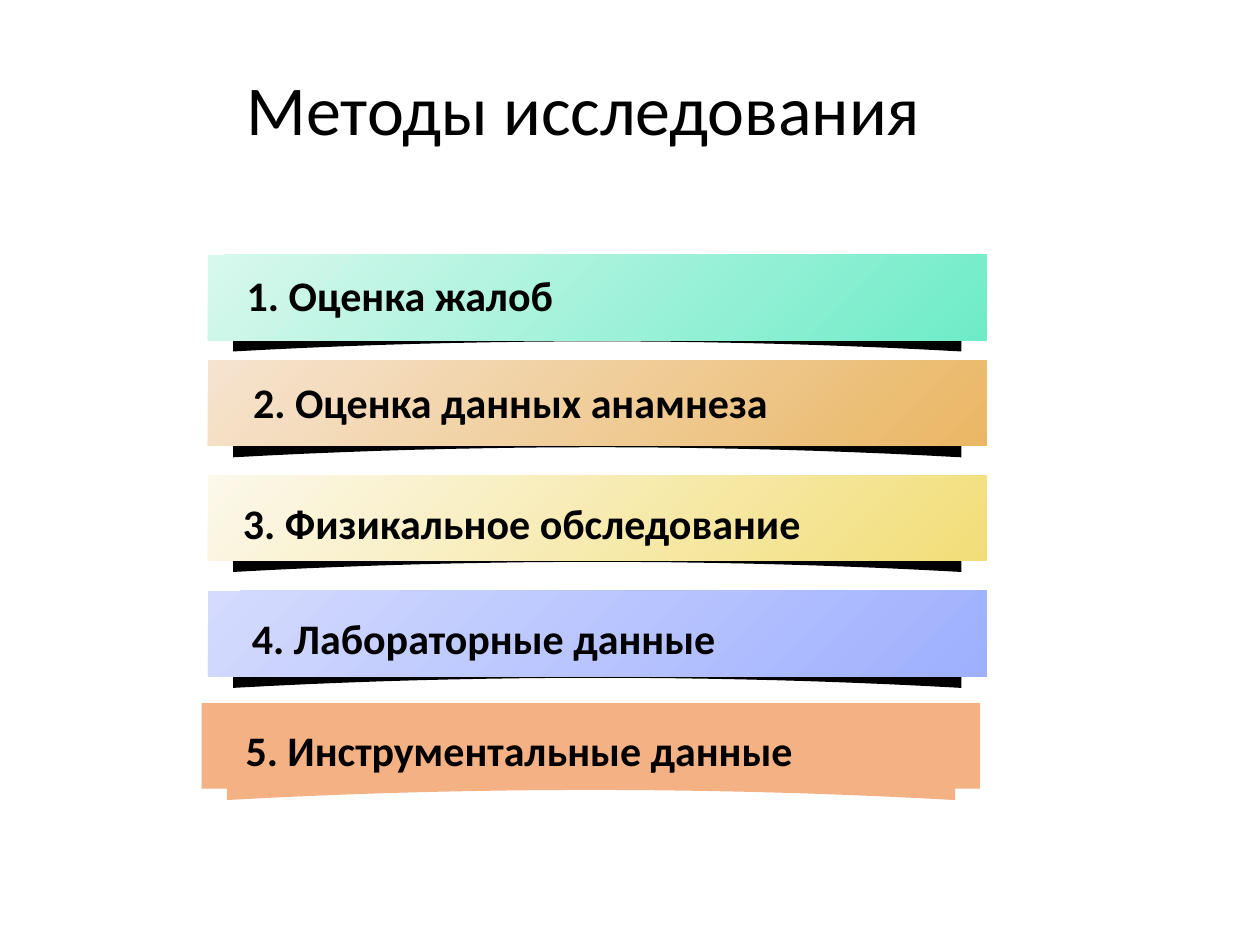
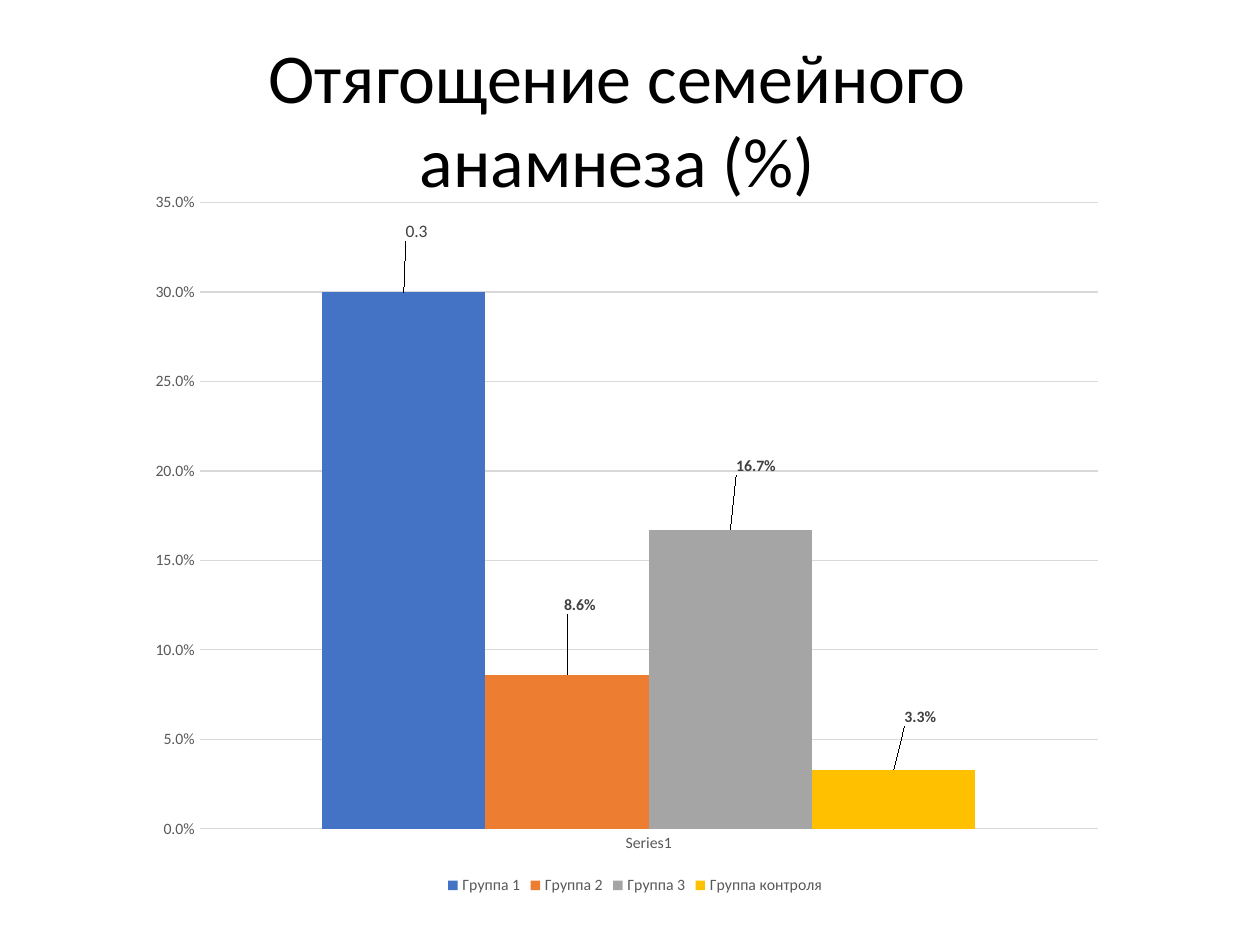
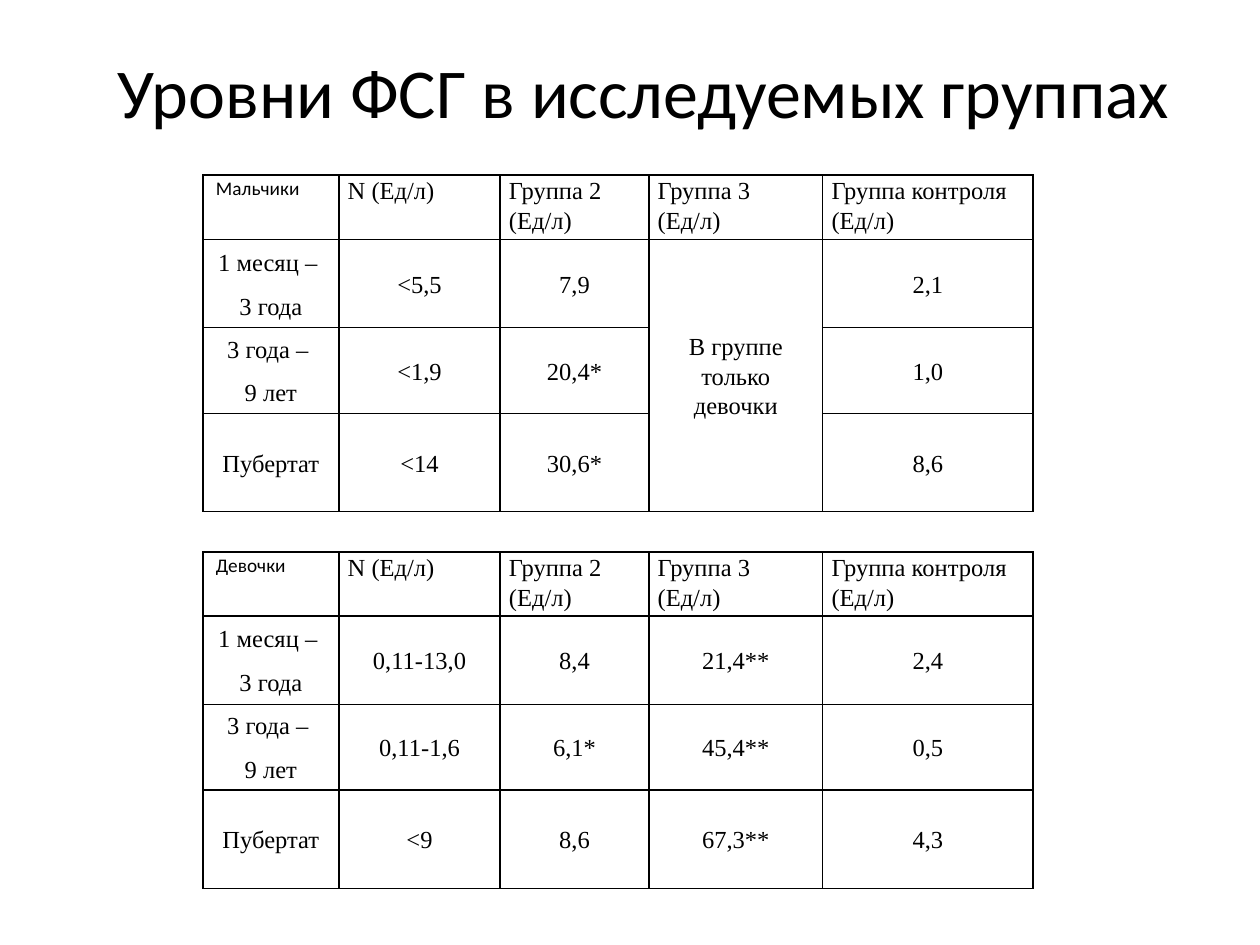
from dataclasses import dataclass
from typing import Optional

from lxml.etree import Element, SubElement
from pptx import Presentation
from pptx.chart.data import CategoryChartData
from pptx.dml.color import RGBColor
from pptx.enum.chart import XL_CHART_TYPE as ChartType
from pptx.enum.chart import XL_LABEL_POSITION as LabelPosition
from pptx.enum.chart import XL_LEGEND_POSITION as LegendPosition
from pptx.enum.chart import XL_TICK_MARK as TickMark
from pptx.enum.shapes import MSO_SHAPE as Preset
from pptx.enum.text import MSO_ANCHOR as Anchor
from pptx.enum.text import MSO_AUTO_SIZE as AutoSize
from pptx.enum.text import PP_ALIGN as Align
from pptx.oxml.ns import qn
from pptx.util import Inches, Pt

COLORS = {
    "text": "000000",
    "label": "404040",
    "axis": "595959",
    "grid": "D9D9D9",
    "mint_light": "D9F8ED",
    "mint": "6EECC8",
    "sand_light": "F6E4D0",
    "sand": "EAB764",
    "lemon_light": "FCF8EB",
    "lemon": "F2DE78",
    "violet_light": "D4DBFE",
    "violet": "9EB0FE",
    "peach": "F4B183",
    "group_1": "4472C4",
    "group_2": "ED7D31",
    "group_3": "A5A5A5",
    "control": "FFC000",
}
SANS = "Calibri"
SERIF = "Times New Roman"
TITLE_ONLY = 5
CELL = Inches(0.1)
BAR_COLS, BAR_ROWS = 61.8, 6.8
CURL_STEPS = 20


@dataclass(frozen=True)
class Box:
    col: float
    row: float
    cols: float
    rows: float

    def lengths(self) -> tuple:
        return tuple(grid(n) for n in (self.col, self.row, self.cols, self.rows))


@dataclass(frozen=True)
class Method:
    text: str
    col: float
    row: float
    text_col: float
    text_row: float
    text_cols: float
    color: str
    light: Optional[str] = None
    curl: str = "text"


@dataclass(frozen=True)
class Group:
    name: str
    share: float
    color: str
    label_dx: float
    label_dy: float
    fixed_label: Optional[str] = None


@dataclass(frozen=True)
class LevelTable:
    who: str
    row: float
    levels: tuple
    merged_note: bool = False


METHODS = (
    Method("1. Оценка жалоб", 16.5, 20.2, 18.6, 20.9, 59.7, "mint", "mint_light"),
    Method("2. Оценка данных анамнеза", 16.5, 28.6, 19.1, 29.4, 56.2, "sand", "sand_light"),
    Method("3. Физикальное обследование", 16.5, 37.7, 18.3, 39, 63.9, "lemon", "lemon_light"),
    Method("4. Лабораторные данные", 16.5, 46.9, 19, 48.1, 46.7, "violet", "violet_light"),
    Method("5. Инструментальные данные", 16, 55.8, 18.5, 57, 58.1, "peach", curl="peach"),
)
GROUPS = (
    Group("Группа 1", 0.3, "group_1", 1.3, -6.5, "0.3"),
    Group("Группа 2", 0.086, "group_2", 1.3, -7.8, None),
    Group("Группа 3", 0.167, "group_3", 2.6, -7, None),
    Group("Группа контроля", 0.033, "control", 2.7, -5.4, None),
)
PLOT_PERCENT = {"x": 5.7, "y": 1.4, "w": 91.4, "h": 88.6}
AGES = (("1 месяц – ", "3 года"), ("3 года – ", "9 лет"), ("Пубертат",))
HEADINGS = ("N (Ед/л)", "Группа 2 (Ед/л)", "Группа 3 (Ед/л)", "Группа контроля\n(Ед/л)")
LEVEL_COLS = (10.8, 12.8, 11.8, 13.8, 16.7)
LEVEL_ROWS = (5.1, 7, 6.8, 7.8)
LEVEL_TABLES = (
    LevelTable(
        " Мальчики",
        13.9,
        (
            ("<5,5", "7,9", "В группе только девочки", "2,1"),
            ("<1,9", "20,4*", "", "1,0"),
            ("<14", "30,6*", "", "8,6"),
        ),
        merged_note=True,
    ),
    LevelTable(
        " Девочки",
        43.8,
        (
            ("0,11-13,0", "8,4", "21,4**", "2,4"),
            ("0,11-1,6", "6,1*", "45,4**", "0,5"),
            ("<9", "8,6", "67,3**", "4,3"),
        ),
    ),
)


def grid(count: float) -> int:
    return round(count * CELL)


def rgb(name: str) -> RGBColor:
    return RGBColor.from_string(COLORS[name])


def style(font, size: float, color: str = "text", face: str = SANS, bold: bool = False) -> None:
    font.size, font.name, font.bold = Pt(size), face, bold
    font.color.rgb = rgb(color)


def place(shape, box: Box) -> None:
    shape.left, shape.top, shape.width, shape.height = box.lengths()


def titled_slide(deck, title: str, box: Box):
    slide = deck.slides.add_slide(deck.slide_layouts[TITLE_ONLY])
    heading = slide.shapes.title
    place(heading, box)
    frame = heading.text_frame
    frame.text = title
    frame.word_wrap, frame.auto_size = True, AutoSize.NONE
    frame.vertical_anchor = Anchor.MIDDLE
    frame.paragraphs[0].alignment = Align.CENTER
    style(frame.paragraphs[0].runs[0].font, 40)
    return slide


def draw_curl(shapes, method: Method) -> None:
    left, top = method.col + 2, method.row + 4.4
    middle, half = left + 28.9, 28.9
    shares = [1 - 2 * step / CURL_STEPS for step in range(CURL_STEPS + 1)]
    lower = [(grid(middle + half * u), grid(top + 2.5 + 0.8 * u * u)) for u in shares]
    upper = [
        (grid(left), grid(top + 0.85)),
        (grid(middle), grid(top)),
        (grid(middle + half), grid(top + 0.85)),
    ]
    builder = shapes.build_freeform(*lower[0])
    builder.add_line_segments(lower[1:] + upper, close=True)
    curl = builder.convert_to_shape()
    curl.shadow.inherit = False
    curl.fill.solid()
    curl.fill.fore_color.rgb = rgb(method.curl)
    curl.line.fill.background()


def draw_method(slide, method: Method) -> None:
    banner = slide.shapes.add_group_shape()
    draw_curl(banner.shapes, method)
    strip = Box(method.col, method.row, BAR_COLS, BAR_ROWS)
    bar = banner.shapes.add_shape(Preset.RECTANGLE, *strip.lengths())
    bar.shadow.inherit = False
    bar.line.fill.background()
    if method.light:
        bar.fill.gradient()
        bar.fill.gradient_angle = 315
        for stop, color in zip(bar.fill.gradient_stops, (method.light, method.color)):
            stop.color.rgb = rgb(color)
    else:
        bar.fill.solid()
        bar.fill.fore_color.rgb = rgb(method.color)
    caption_box = Box(method.text_col, method.text_row, method.text_cols, 5)
    caption = slide.shapes.add_textbox(*caption_box.lengths()).text_frame
    caption.word_wrap = True
    caption.text = method.text
    style(caption.paragraphs[0].runs[0].font, 24, bold=True)


def manual_layout(percents: dict, inner: bool = False):
    layout = Element(qn("c:layout"))
    manual = SubElement(layout, qn("c:manualLayout"))
    if inner:
        SubElement(manual, qn("c:layoutTarget")).set("val", "inner")
        for mode in ("xMode", "yMode"):
            SubElement(manual, qn(f"c:{mode}")).set("val", "edge")
    for side, percent in percents.items():
        SubElement(manual, qn(f"c:{side}")).set("val", f"{percent / 100:.3f}")
    return layout


def format_group(series, group: Group) -> None:
    series.format.fill.solid()
    series.format.fill.fore_color.rgb = rgb(group.color)
    series.invert_if_negative = False
    labels = series.data_labels
    labels.show_value = True
    size = 10 if group.fixed_label else 9
    style(labels.font, size, "label", bold=True)
    label = series.points[0].data_label
    if group.fixed_label:
        label.text_frame.text = group.fixed_label
        style(label.text_frame.paragraphs[0].runs[0].font, size, "label")
    else:
        style(label.font, size, "label", bold=True)
    label.position = LabelPosition.OUTSIDE_END
    offset = manual_layout({"x": group.label_dx, "y": group.label_dy})
    labels._element.find(qn("c:dLbl")).insert(1, offset)


def draw_shares(slide, box: Box) -> None:
    shares = CategoryChartData(number_format="0.0%")
    shares.categories = ["Series1"]
    for group in GROUPS:
        shares.add_series(group.name, [group.share])
    chart = slide.shapes.add_chart(ChartType.COLUMN_CLUSTERED, *box.lengths(), shares).chart
    style(chart.font, 10)
    chart.has_title = False
    chart.has_legend = True
    chart.legend.position = LegendPosition.BOTTOM
    chart.legend.include_in_layout = False
    style(chart.legend.font, 9, "axis")
    for axis in (chart.category_axis, chart.value_axis):
        axis.major_tick_mark = axis.minor_tick_mark = TickMark.NONE
        axis.format.line.fill.background()
        style(axis.tick_labels.font, 9, "axis")
    scale = chart.value_axis
    scale.minimum_scale, scale.maximum_scale, scale.major_unit = 0, 0.35, 0.05
    scale.tick_labels.number_format = "0.0%"
    scale.tick_labels.number_format_is_linked = False
    scale.major_gridlines.format.line.color.rgb = rgb("grid")
    scale.major_gridlines.format.line.width = Pt(0.75)
    plot = chart.plots[0]
    plot.gap_width, plot.overlap, plot.vary_by_categories = 150, 0, False
    for series, group in zip(plot.series, GROUPS):
        format_group(series, group)
    area = chart._chartSpace.find(f".//{qn('c:plotArea')}")
    for automatic in area.findall(qn("c:layout")):
        area.remove(automatic)
    area.insert(0, manual_layout(PLOT_PERCENT, inner=True))


def outline(cell) -> None:
    properties = cell._tc.get_or_add_tcPr()
    for order, side in enumerate(("lnL", "lnR", "lnT", "lnB")):
        line = Element(qn(f"a:{side}"), w=str(Pt(1)))
        paint = SubElement(line, qn("a:solidFill"))
        SubElement(paint, qn("a:srgbClr")).set("val", COLORS["text"])
        properties.insert(order, line)


def fill_cell(cell, lines: tuple, heading: bool, size: float, face: str) -> None:
    cell.margin_left = cell.margin_right = Inches(0.07)
    cell.margin_top = cell.margin_bottom = 0
    cell.vertical_anchor = Anchor.TOP if heading else Anchor.MIDDLE
    cell.fill.background()
    outline(cell)
    frame = cell.text_frame
    for index, line in enumerate(lines):
        paragraph = frame.add_paragraph() if index else frame.paragraphs[0]
        paragraph.text = line.replace("\n", "\v")
        paragraph.alignment = Align.LEFT if heading else Align.CENTER
        paragraph.line_spacing, paragraph.space_after = 1.1, Pt(8)
        style(paragraph.font, size, face=face)
        for run in paragraph.runs:
            style(run.font, size, face=face)


def draw_levels(slide, levels: LevelTable) -> None:
    box = Box(16.1, levels.row, sum(LEVEL_COLS), sum(LEVEL_ROWS))
    table = slide.shapes.add_table(len(LEVEL_ROWS), len(LEVEL_COLS), *box.lengths()).table
    table.first_row = table.horz_banding = False
    for column, cols in zip(table.columns, LEVEL_COLS):
        column.width = grid(cols)
    for row, rows in zip(table.rows, LEVEL_ROWS):
        row.height = grid(rows)
    header = [(text,) for text in (levels.who, *HEADINGS)]
    body = [[age, *((value,) for value in values)] for age, values in zip(AGES, levels.levels)]
    for r, entries in enumerate([header, *body]):
        for c, lines in enumerate(entries):
            corner = r == c == 0
            size, face = (11, SANS) if corner else (14, SERIF)
            fill_cell(table.cell(r, c), lines, r == 0, size, face)
    if levels.merged_note:
        table.cell(1, 3).merge(table.cell(3, 3))


def main() -> None:
    deck = Presentation()
    deck.slide_width, deck.slide_height = grid(100), grid(75)

    methods = titled_slide(deck, "Методы исследования", Box(10.3, 4.7, 72, 7.7))
    for method in METHODS:
        draw_method(methods, method)

    history = titled_slide(deck, "Отягощение семейного анамнеза (%)", Box(13, 2.1, 72, 14.5))
    draw_shares(history, Box(11.4, 15.3, 78, 56.1))

    hormone = titled_slide(deck, "Уровни ФСГ в исследуемых группах ", Box(7.7, 3.3, 88, 7.7))
    for levels in LEVEL_TABLES:
        draw_levels(hormone, levels)

    deck.save("out.pptx")


if __name__ == "__main__":
    main()
